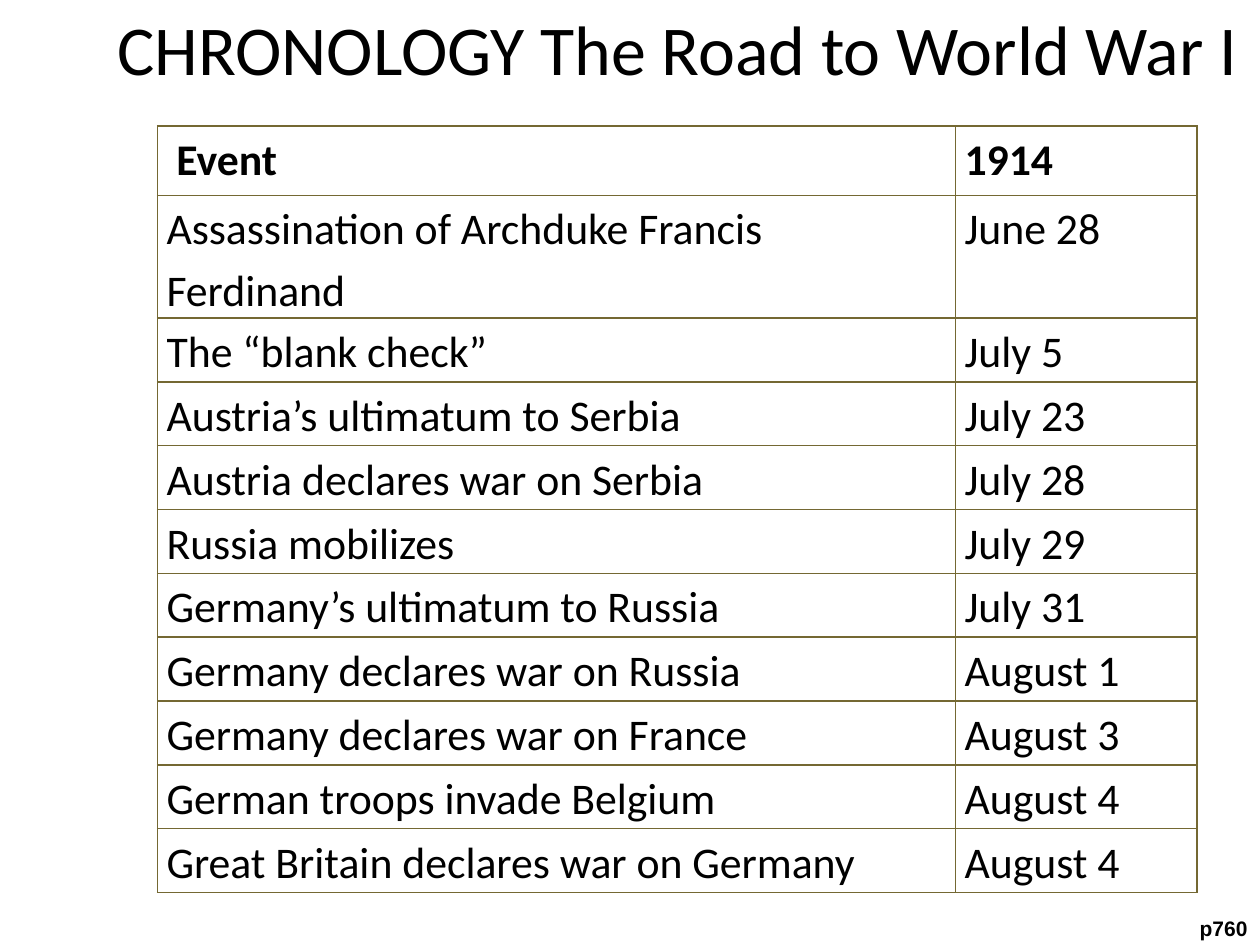
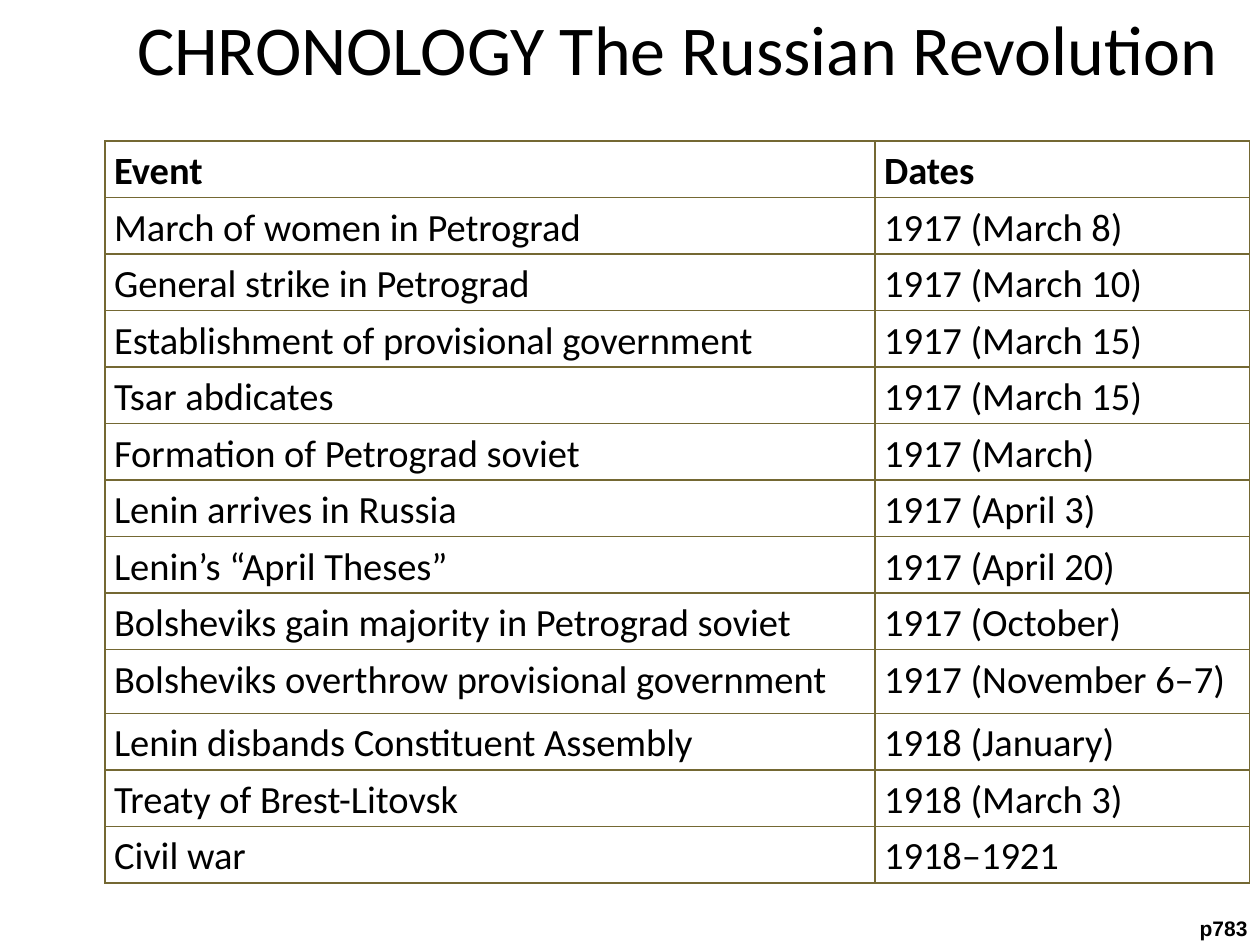
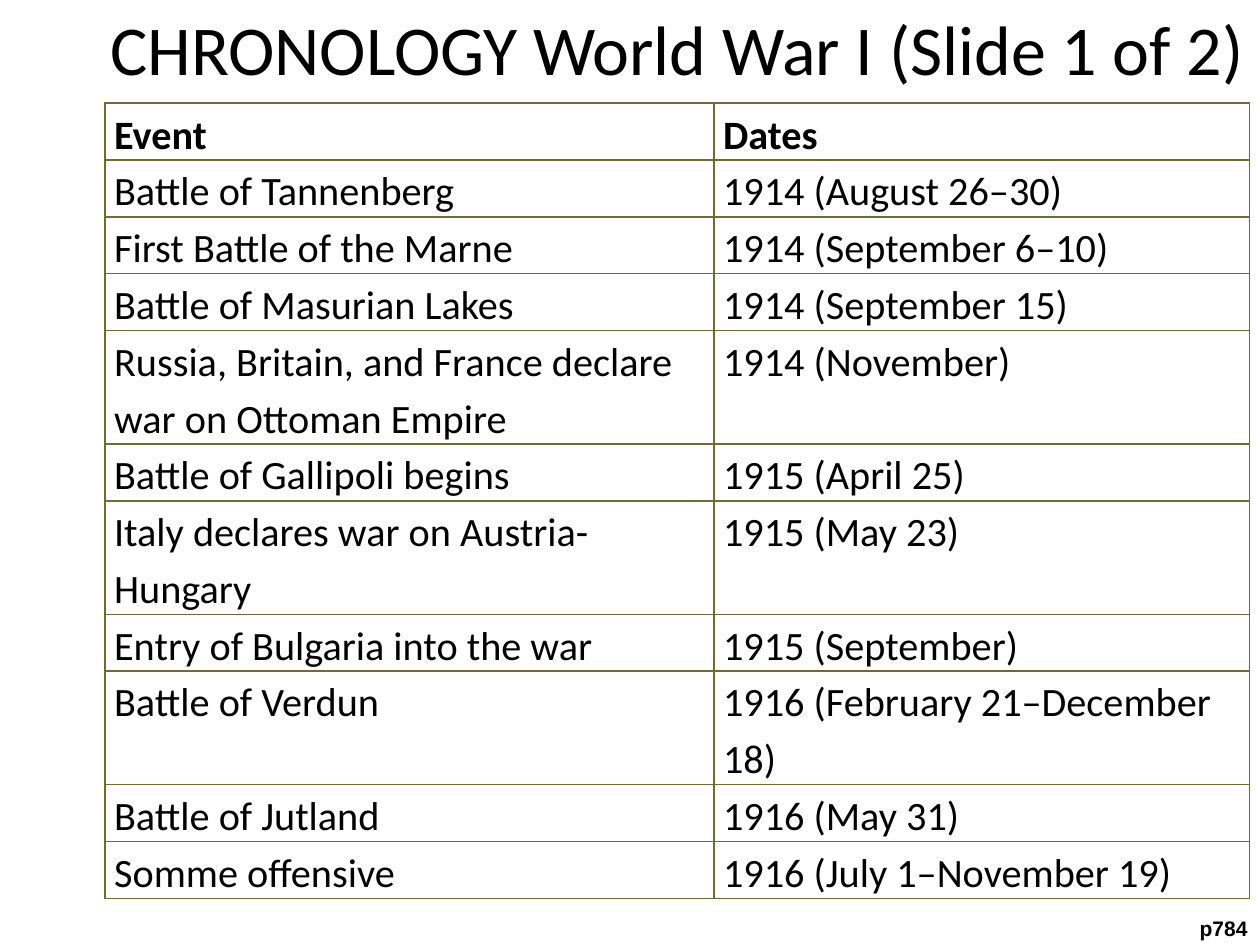
from pptx import Presentation
from pptx.dml.color import RGBColor
from pptx.enum.text import MSO_ANCHOR, MSO_AUTO_SIZE, PP_ALIGN
from pptx.oxml.ns import qn
from pptx.util import Pt
from lxml import etree

CENTER, RIGHT = PP_ALIGN.CENTER, PP_ALIGN.RIGHT
MIDDLE = MSO_ANCHOR.MIDDLE
NO_FIT = MSO_AUTO_SIZE.NONE

INK, RULE = "000000", "746833"
TITLE_FONT = {"name": "Calibri", "size": Pt(40), "bold": False}
PAGE_FONT = {"name": "Arial", "size": Pt(12), "bold": True}
TITLE_BOX = (54, 12.24, 666, 30.24)
PAGE_BOX = (674.6, 519.8, 45.4, 21.8)
CELL_INSET = 5.2

CHRONOLOGIES = [
    {
        "title": "CHRONOLOGY The Road to World War I",
        "page": "p760",
        "origin": (90, 72),
        "columns": (456, 138),
        "size": 25,
        "row_height": 36.5,
        "tall_rows": {0: 39.6},
        "header_indent": 5.6,
        "rows": [
            ("Event", "1914"),
            ("Assassination of Archduke Francis Ferdinand", "June 28"),
            ("The “blank check”", "July 5"),
            ("Austria’s ultimatum to Serbia", "July 23"),
            ("Austria declares war on Serbia", "July 28"),
            ("Russia mobilizes", "July 29"),
            ("Germany’s ultimatum to Russia", "July 31"),
            ("Germany declares war on Russia", "August 1"),
            ("Germany declares war on France", "August 3"),
            ("German troops invade Belgium", "August 4"),
            ("Great Britain declares war on Germany", "August 4"),
        ],
    },
    {
        "title": "CHRONOLOGY The Russian Revolution",
        "page": "p783",
        "origin": (60, 80.6),
        "columns": (440, 214),
        "size": 22,
        "row_height": 32.3,
        "tall_rows": {9: 36.5},
        "header_indent": 0,
        "rows": [
            ("Event", "Dates"),
            ("March of women in Petrograd", "1917 (March 8)"),
            ("General strike in Petrograd", "1917 (March 10)"),
            ("Establishment of provisional government", "1917 (March 15)"),
            ("Tsar abdicates", "1917 (March 15)"),
            ("Formation of Petrograd soviet", "1917 (March)"),
            ("Lenin arrives in Russia", "1917 (April 3)"),
            ("Lenin’s “April Theses”", "1917 (April 20)"),
            ("Bolsheviks gain majority in Petrograd soviet", "1917 (October)"),
            ("Bolsheviks overthrow provisional government", "1917 (November 6–7)"),
            ("Lenin disbands Constituent Assembly", "1918 (January)"),
            ("Treaty of Brest-Litovsk", "1918 (March 3)"),
            ("Civil war", "1918–1921"),
        ],
    },
    {
        "title": "CHRONOLOGY World War I (Slide 1 of 2)",
        "page": "p784",
        "origin": (60, 59),
        "columns": (348, 306),
        "size": 23,
        "row_height": 32.3,
        "tall_rows": {4: 50.4},
        "header_indent": 0,
        "rows": [
            ("Event", "Dates"),
            ("Battle of Tannenberg", "1914 (August 26–30)"),
            ("First Battle of the Marne", "1914 (September 6–10)"),
            ("Battle of Masurian Lakes", "1914 (September 15)"),
            ("Russia, Britain, and France declare war on Ottoman Empire",
             "1914 (November)"),
            ("Battle of Gallipoli begins", "1915 (April 25)"),
            ("Italy declares war on Austria-Hungary", "1915 (May 23)"),
            ("Entry of Bulgaria into the war", "1915 (September)"),
            ("Battle of Verdun", "1916 (February 21–December 18)"),
            ("Battle of Jutland", "1916 (May 31)"),
            ("Somme offensive", "1916 (July 1–November 19)"),
        ],
    },
]


def rgb(color):
    return RGBColor.from_string(color)


def set_attrs(target, values):
    for name, value in values.items():
        setattr(target, name, value)


def write(tf, text, font, **paragraph_format):
    p = tf.paragraphs[0]
    set_attrs(p, paragraph_format)
    r = p.add_run()
    r.text = text
    set_attrs(r.font, font)
    r.font.color.rgb = rgb(INK)


def add_title(s, box, text):
    sp = s.shapes.title
    set_attrs(sp, dict(zip(("left", "top", "width", "height"), map(Pt, box))))
    set_attrs(sp.text_frame, {"auto_size": NO_FIT, "vertical_anchor": MIDDLE,
                              "word_wrap": True})
    write(sp.text_frame, text, TITLE_FONT, alignment=CENTER)


def add_page_reference(s, box, text):
    tf = s.shapes.add_textbox(*map(Pt, box)).text_frame
    set_attrs(tf, {"word_wrap": False, "auto_size": NO_FIT})
    write(tf, text, PAGE_FONT, alignment=RIGHT)


def add_borders(cell):
    tc_pr = cell._tc.get_or_add_tcPr()
    for index, side in enumerate(("lnL", "lnR", "lnT", "lnB")):
        ln = etree.Element(qn(f"a:{side}"), w=str(Pt(1)))
        fill = etree.SubElement(ln, qn("a:solidFill"))
        etree.SubElement(fill, qn("a:srgbClr"), val=RULE)
        tc_pr.insert(index, ln)


def add_chronology(s, data):
    rows, columns = data["rows"], data["columns"]
    heights = [data["tall_rows"].get(i, data["row_height"])
               for i in range(len(rows))]
    box = (*data["origin"], sum(columns), sum(heights))
    table = s.shapes.add_table(len(rows), len(columns), *map(Pt, box)).table
    set_attrs(table, {"first_row": False, "horz_banding": False})
    for column, width in zip(table.columns, columns):
        column.width = Pt(width)
    for i, (row, height, texts) in enumerate(zip(table.rows, heights, rows)):
        row.height = Pt(height)
        font = {"name": "Calibri", "size": Pt(data["size"]), "bold": i == 0}
        for cell, text in zip(row.cells, texts):
            set_attrs(cell, {"margin_left": Pt(CELL_INSET),
                             "margin_right": Pt(CELL_INSET),
                             "margin_top": 0, "margin_bottom": 0})
            cell.fill.background()
            add_borders(cell)
            write(cell.text_frame, text, font, line_spacing=1.15)
    table.cell(0, 0).margin_left = Pt(CELL_INSET + data["header_indent"])


def main():
    prs = Presentation()
    prs.slide_width, prs.slide_height = Pt(720), Pt(540)
    for data in CHRONOLOGIES:
        s = prs.slides.add_slide(prs.slide_layouts[5])
        add_title(s, TITLE_BOX, data["title"])
        add_page_reference(s, PAGE_BOX, data["page"])
        add_chronology(s, data)
    prs.save("out.pptx")


if __name__ == "__main__":
    main()
